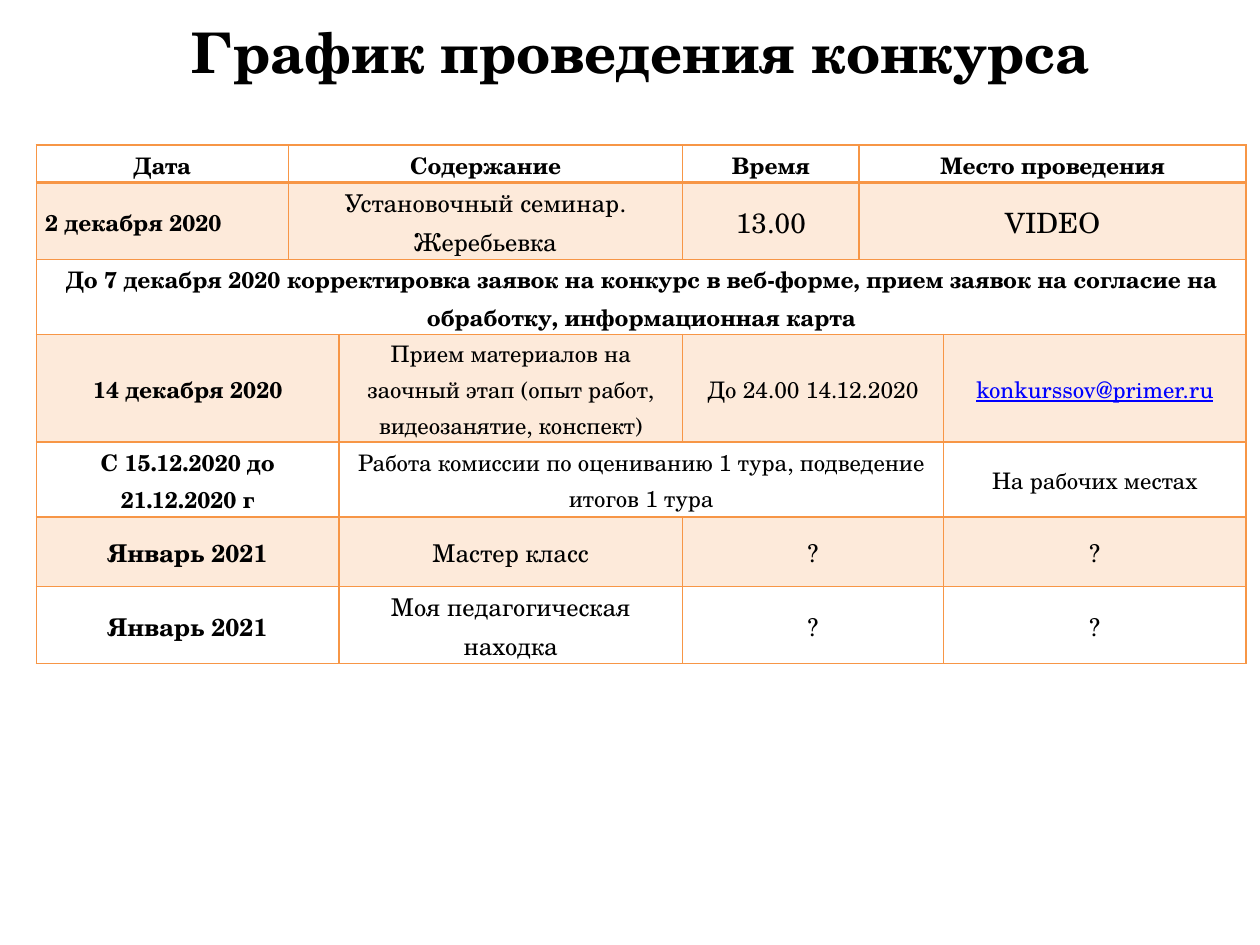
from lxml import etree
from pptx import Presentation
from pptx.dml.color import RGBColor
from pptx.enum.text import MSO_ANCHOR, PP_ALIGN
from pptx.oxml.ns import qn
from pptx.util import Pt

CENTER, LEFT = PP_ALIGN.CENTER, PP_ALIGN.LEFT
TOP, MIDDLE = MSO_ANCHOR.TOP, MSO_ANCHOR.MIDDLE
FONT = "TeX Gyre Schola"
COLORS = {"text": "000000", "link": "0000FF", "line": "F79646",
          "band": "FDEADA", "plain": "FFFFFF"}

TITLE = "График проведения конкурса"
EMAIL = "konkurssov@primer.ru"
COLUMN_WIDTHS = [144, 28.8, 196.5, 100.8, 48.3, 172.8]
HEADER_HEIGHT, ROW_HEIGHT = 19.5, 39.6

# Each cell: text, columns spanned, size, bold
ROWS = [
    [("Дата", 1, 13, True), ("Содержание", 2, 13, True),
     ("Время", 1, 13, True), ("Место проведения", 2, 13, True)],
    [("2 декабря 2020", 1, 13, True),
     ("Установочный семинар. Жеребьевка", 2, 14, False),
     ("13.00", 1, 16, False), ("VIDEO", 2, 16, False)],
    [("До 7 декабря 2020 корректировка заявок на конкурс в веб-форме, "
      "прием заявок на согласие на обработку, информационная карта", 6, 13, True)],
    [("14 декабря 2020", 2, 13, True),
     ("Прием материалов на заочный этап (опыт работ, видеозанятие, конспект)",
      1, 13, False),
     ("До 24.00 14.12.2020", 2, 13, False), (EMAIL, 1, 13, False)],
    [("C 15.12.2020 до 21.12.2020 г", 2, 13, True),
     ("Работа комиссии по оцениванию 1 тура, подведение итогов 1 тура",
      3, 13, False),
     ("На рабочих местах", 1, 13, False)],
    [("Январь 2021", 2, 14, True), ("Мастер класс", 1, 14, False),
     ("?", 2, 14, False), ("?", 1, 14, False)],
    [("Январь 2021", 2, 14, True), ("Моя педагогическая находка", 1, 14, False),
     ("?", 2, 14, False), ("?", 1, 14, False)],
]


def color(name):
    return RGBColor.from_string(COLORS[name])


def write(para, text, size, bold, align=CENTER, ink="text"):
    para.text = text
    para.alignment = align
    font = para.font
    font.name, font.size, font.bold = FONT, Pt(size), bold
    font.color.rgb = color(ink)


def add_borders(cell, top, bottom):
    """Draw all four sides; call before the fill, which must follow in the XML."""
    properties = cell._tc.get_or_add_tcPr()
    for side, width in (("L", 1), ("R", 1), ("T", top), ("B", bottom)):
        line = etree.SubElement(properties, qn(f"a:ln{side}"), w=str(Pt(width)))
        fill = etree.SubElement(line, qn("a:solidFill"))
        etree.SubElement(fill, qn("a:srgbClr"), val=COLORS["line"])


def fill_cell(cell, row, column, text, size, bold):
    add_borders(cell, 2 if row == 1 else 1, 2 if row == 0 else 1)
    cell.fill.solid()
    cell.fill.fore_color.rgb = color("band" if row % 2 else "plain")
    cell.margin_left = cell.margin_right = Pt(5)
    cell.margin_top = cell.margin_bottom = 0
    cell.vertical_anchor = MIDDLE if row else TOP
    para = cell.text_frame.paragraphs[0]
    is_email = text == EMAIL
    write(para, text, size, bold, LEFT if (row, column) == (1, 0) else CENTER,
          "link" if is_email else "text")
    para.line_spacing = 1.07
    if is_email:
        para.runs[0].font.underline = True
        para.runs[0].font.color.rgb = color("link")


deck = Presentation()
deck.slide_width, deck.slide_height = Pt(720), Pt(540)
page = deck.slides.add_slide(deck.slide_layouts[5])

title = page.shapes.title
title.left, title.top, title.width, title.height = Pt(42.5), Pt(3.6), Pt(648), Pt(51)
title.text_frame.vertical_anchor = MIDDLE
write(title.text_frame.paragraphs[0], TITLE, 32, True)

heights = [HEADER_HEIGHT] + [ROW_HEIGHT] * (len(ROWS) - 1)
table = page.shapes.add_table(len(ROWS), len(COLUMN_WIDTHS), Pt(20.8), Pt(82.8),
                              Pt(sum(COLUMN_WIDTHS)), Pt(sum(heights))).table
for column, width in zip(table.columns, COLUMN_WIDTHS):
    column.width = Pt(width)

for row, (height, cells) in enumerate(zip(heights, ROWS)):
    table.rows[row].height = Pt(height)
    column = 0
    for text, span, size, bold in cells:
        cell = table.cell(row, column)
        if span > 1:
            cell.merge(table.cell(row, column + span - 1))
        fill_cell(cell, row, column, text, size, bold)
        column += span

deck.save("out.pptx")
